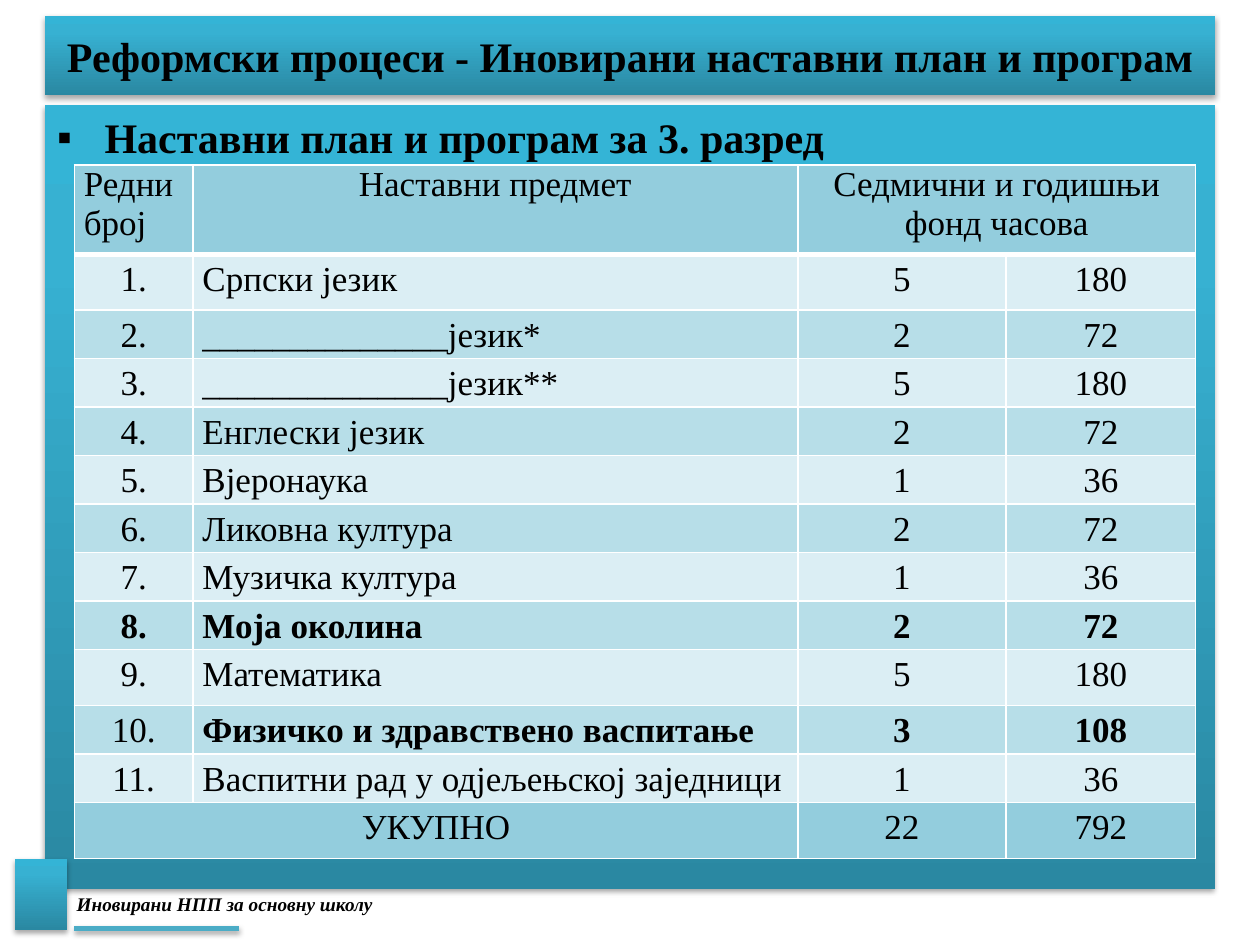
from lxml import etree
from pptx import Presentation
from pptx.dml.color import RGBColor
from pptx.enum.shapes import MSO_CONNECTOR as Connector, MSO_SHAPE as Shape
from pptx.enum.text import MSO_ANCHOR as Anchor, MSO_AUTO_SIZE as AutoSize, PP_ALIGN as Align
from pptx.oxml import parse_xml
from pptx.oxml.ns import nsdecls, qn
from pptx.util import Pt

FONT = "Times New Roman"
COLORS = {
    "text": "000000", "border": "FFFFFF", "accent": "4BACC6",
    "head": "93CDDD", "light": "DBEEF4", "dark": "B7DEE8",
}
GRADIENT = [(0, "2A88A2"), (80, "37B1D2"), (100, "34B4D6")]
COLUMN_WIDTHS = [67.8, 345.6, 119, 108.4]
HEADER_HEIGHT, TALL_ROW, ROW = 51, 32, 27.7
TALL_ROWS = {1, 9, 12}
HEADERS = ["Редни број", "Наставни предмет", "Седмични и годишњи фонд часова", ""]
SUBJECTS = [
    ("Српски језик", 5, 180),
    ("______________језик*", 2, 72),
    ("______________језик**", 5, 180),
    ("Енглески језик", 2, 72),
    ("Вјеронаука", 1, 36),
    ("Ликовна култура", 2, 72),
    ("Музичка култура", 1, 36),
    ("Моја околина", 2, 72),
    ("Математика", 5, 180),
    ("Физичко и здравствено васпитање", 3, 108),
    ("Васпитни рад у одјељењској заједници", 1, 36),
]
TOTALS = ["УКУПНО", "", "22", "792"]
BOLD_CELLS = {(8, 0), (8, 1), (8, 2), (8, 3), (10, 1), (10, 2), (10, 3)}


def add_run(paragraph, text, size, bold=False, italic=False):
    run = paragraph.add_run()
    run.text = text
    font = run.font
    font.name, font.size, font.bold, font.italic = FONT, Pt(size), bold, italic
    font.color.rgb = RGBColor.from_string(COLORS["text"])


def place(shape, box):
    shape.left, shape.top, shape.width, shape.height = (Pt(length) for length in box)


def add_shadow(shape):
    shape._element.spPr.append(parse_xml(
        f'<a:effectLst {nsdecls("a")}><a:outerShdw blurRad="{Pt(3.1)}" dist="{Pt(1.8)}" '
        'dir="5400000" rotWithShape="0"><a:srgbClr val="000000"><a:alpha val="35000"/>'
        '</a:srgbClr></a:outerShdw></a:effectLst>'))


def style_panel(shape):
    """Give the shape the teal gradient, no outline and a soft shadow."""
    stops = "".join(f'<a:gs pos="{position * 1000}"><a:srgbClr val="{color}"/></a:gs>'
                    for position, color in GRADIENT)
    shape._element.spPr.append(parse_xml(
        f'<a:gradFill {nsdecls("a")} rotWithShape="1"><a:gsLst>{stops}</a:gsLst>'
        '<a:lin ang="16200000" scaled="0"/></a:gradFill>'))
    shape.line.fill.background()
    add_shadow(shape)


def fill_title(title, box):
    place(title, box)
    style_panel(title)
    frame = title.text_frame
    frame.auto_size, frame.vertical_anchor = AutoSize.NONE, Anchor.MIDDLE
    paragraph = frame.paragraphs[0]
    paragraph.alignment = Align.CENTER
    add_run(paragraph, "Реформски процеси - Иновирани наставни план и програм", 24, bold=True)


def fill_body(body, box):
    place(body, box)
    style_panel(body)
    body.text_frame.auto_size = AutoSize.NONE
    paragraph = body.text_frame.paragraphs[0]
    paragraph.alignment = Align.JUSTIFY
    properties = paragraph._p.get_or_add_pPr()
    properties.set("marL", str(Pt(27)))
    properties.set("indent", str(-Pt(27)))
    etree.SubElement(properties, qn("a:buChar"), char="▪")
    add_run(paragraph, "Наставни план и програм за 3. разред", 24, bold=True)


def set_borders(cell, top=1, bottom=1):
    properties = cell._tc.get_or_add_tcPr()
    sides = [("L", 1), ("R", 1), ("T", top), ("B", bottom)]
    for index, (side, width) in enumerate(sides):
        properties.insert(index, parse_xml(
            f'<a:ln{side} {nsdecls("a")} w="{Pt(width)}"><a:solidFill>'
            f'<a:srgbClr val="{COLORS["border"]}"/></a:solidFill></a:ln{side}>'))


def fill_cell(cell, row, column, text, color):
    cell.margin_left = cell.margin_right = Pt(5.4)
    cell.margin_top = cell.margin_bottom = 0
    cell.fill.solid()
    cell.fill.fore_color.rgb = RGBColor.from_string(COLORS[color])
    set_borders(cell, top=3 if row == 1 else 1, bottom=3 if row == 0 else 1)
    if not text:
        return
    paragraph = cell.text_frame.paragraphs[0]
    is_left = (row == 0 and column == 0) or (0 < row <= len(SUBJECTS) and column == 1)
    paragraph.alignment = Align.LEFT if is_left else Align.CENTER
    if row:
        paragraph.line_spacing = 1.15
    add_run(paragraph, text, 20, bold=(row, column) in BOLD_CELLS)


def add_timetable(slide, left, top):
    subject_rows = [[f"{number}.", name, str(weekly), str(yearly)]
                    for number, (name, weekly, yearly) in enumerate(SUBJECTS, 1)]
    rows = [HEADERS, *subject_rows, TOTALS]
    last = len(rows) - 1
    heights = [HEADER_HEIGHT] + [TALL_ROW if row in TALL_ROWS else ROW
                                 for row in range(1, len(rows))]
    table = slide.shapes.add_table(len(rows), len(COLUMN_WIDTHS), Pt(left), Pt(top),
                                   Pt(sum(COLUMN_WIDTHS)), Pt(sum(heights))).table
    for column, width in zip(table.columns, COLUMN_WIDTHS):
        column.width = Pt(width)
    for row, (texts, height) in enumerate(zip(rows, heights)):
        table.rows[row].height = Pt(height)
        color = "head" if row in (0, last) else "light" if row % 2 else "dark"
        for column, text in enumerate(texts):
            fill_cell(table.cell(row, column), row, column, text, color)
    table.cell(0, 2).merge(table.cell(0, 3))
    table.cell(last, 0).merge(table.cell(last, 1))


def add_footer(slide, left, top):
    square = slide.shapes.add_shape(Shape.RECTANGLE, Pt(left), Pt(top), Pt(30), Pt(40.3))
    style_panel(square)

    label = slide.shapes.add_textbox(Pt(left + 28.1), Pt(top + 15.1), Pt(254.9), Pt(20.9))
    label.text_frame.word_wrap = True
    add_run(label.text_frame.paragraphs[0], "Иновирани НПП за основну школу", 11,
            bold=True, italic=True)

    line_top = Pt(top + 39.6)
    underline = slide.shapes.add_connector(Connector.STRAIGHT, Pt(left + 33.9), line_top,
                                           Pt(left + 128.2), line_top)
    underline.line.color.rgb = RGBColor.from_string(COLORS["accent"])
    underline.line.width = Pt(3)
    add_shadow(underline)


def main():
    presentation = Presentation()
    presentation.slide_width, presentation.slide_height = Pt(720), Pt(540)
    slide = presentation.slides.add_slide(presentation.slide_layouts[1])
    fill_title(slide.shapes.title, (25.5, 9.2, 669, 45.2))
    fill_body(slide.placeholders[1], (25.5, 60.2, 669, 447.8))
    add_footer(slide, 8.6, 491)
    add_timetable(slide, 42.5, 94.3)
    presentation.save("out.pptx")


if __name__ == "__main__":
    main()
